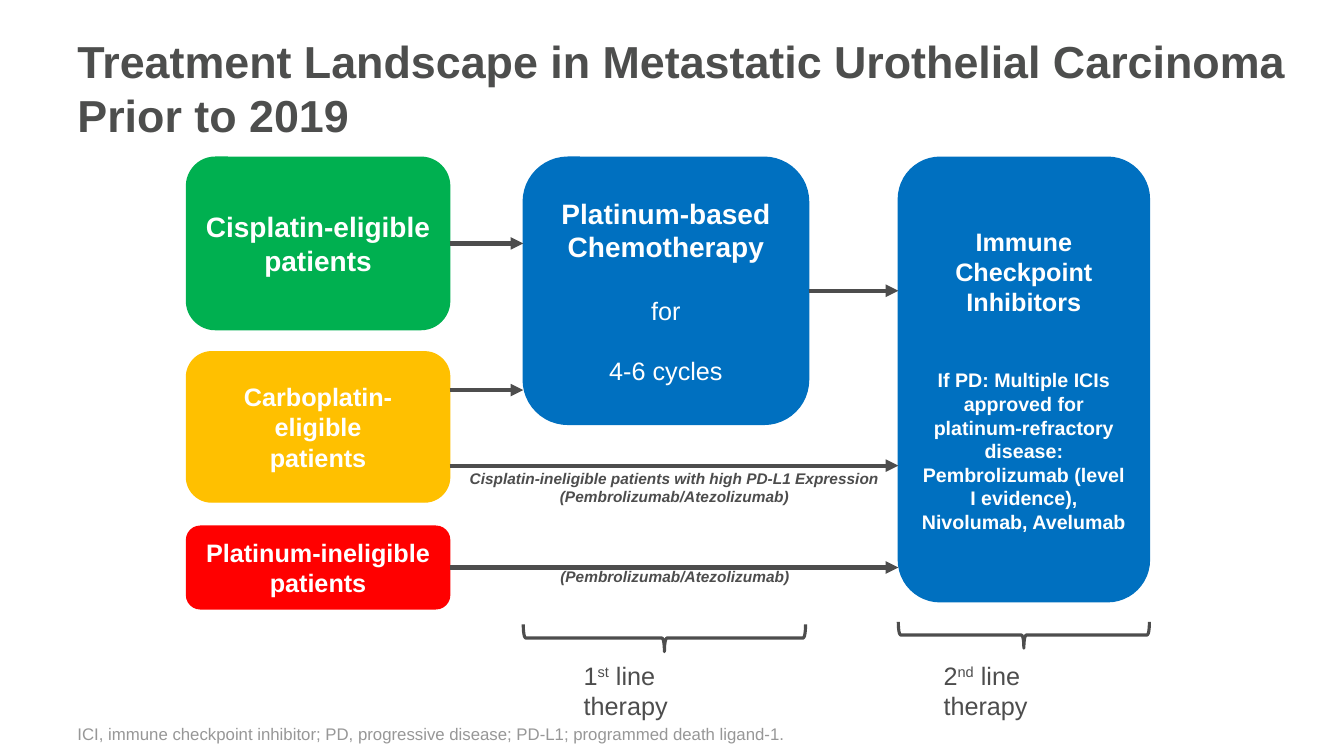
from lxml import etree
from pptx import Presentation
from pptx.dml.color import RGBColor
from pptx.enum.shapes import MSO_CONNECTOR, MSO_SHAPE as Shape
from pptx.enum.text import MSO_ANCHOR as Anchor, PP_ALIGN as Align
from pptx.oxml.ns import qn
from pptx.util import Inches, Pt

GREY, WHITE, BLUE = "4D4D4D", "FFFFFF", "0070C0"
# Columns (left, width) and shared rows of the diagram
PATIENTS, FIRST_LINE, SECOND_LINE = (1.85, 2.61), (5.19, 2.83), (8.91, 2.49)
TOP, LABEL_ROW, MARGIN = 1.56, 6.5, 0.67


def color(code):
    return RGBColor.from_string(code)


def write(part, paragraphs, code, align=Align.CENTER, anchor=Anchor.MIDDLE, italic=False):
    """Fill a part with paragraphs of (text, size, bold, space before)."""
    frame = part.text_frame
    frame.word_wrap, frame.vertical_anchor = True, anchor
    frame.text = "\n".join(text for text, *_ in paragraphs)
    for paragraph, (_, size, bold, gap) in zip(frame.paragraphs, paragraphs):
        paragraph.alignment = align
        if gap:
            paragraph.space_before = Pt(gap)
        for run in paragraph.runs:
            font = run.font
            font.name, font.size, font.bold, font.italic = "Arial", Pt(size), bold, italic
            font.color.rgb = color(code)


prs = Presentation()
prs.slide_width, prs.slide_height = Inches(13.33), Inches(7.5)
slide = prs.slides.add_slide(prs.slide_layouts[6])
shapes = slide.shapes

# Patient groups and treatments
boxes = {}
for name, (left, width), top, height, fill, paragraphs in [
    ("immune", SECOND_LINE, TOP, 4.41, BLUE, [
        ("Immune Checkpoint Inhibitors", 18, True, 0),
        ("If PD: Multiple ICIs approved for platinum-refractory disease: "
         "Pembrolizumab (level I evidence), Nivolumab, Avelumab", 14, True, 37)]),
    ("cisplatin", PATIENTS, TOP, 1.71, "00B050", [
        ("Cisplatin-eligible", 20, True, 0), ("patients", 20, True, 0)]),
    ("carboplatin", PATIENTS, 3.49, 1.49, "FFC000", [
        ("Carboplatin-eligible", 18, True, 0), ("patients", 18, True, 0)]),
    ("ineligible", PATIENTS, 5.22, 0.82, "FF0000", [
        ("Platinum-ineligible", 18, True, 0), ("patients", 18, True, 0)]),
    ("chemotherapy", FIRST_LINE, TOP, 2.65, BLUE, [
        ("Platinum-based Chemotherapy", 20, True, 0),
        ("for", 18, False, 23), ("4-6 cycles", 18, False, 21)]),
]:
    box = shapes.add_shape(Shape.ROUNDED_RECTANGLE, Inches(left), Inches(top),
                           Inches(width), Inches(height))
    box.shadow.inherit = False
    box.fill.solid()
    box.fill.fore_color.rgb = box.line.color.rgb = color(fill)
    box.line.width = Pt(1)
    write(box, paragraphs, WHITE)
    boxes[name] = box

# Arrows: level with the middle of their start box unless a height is given
for start, end, level in [
    ("cisplatin", "chemotherapy", None),
    ("carboplatin", "chemotherapy", 3.87),
    ("carboplatin", "immune", 4.62),
    ("ineligible", "immune", None),
    ("chemotherapy", "immune", None),
]:
    origin, target = boxes[start], boxes[end]
    y = Inches(level) if level else origin.top + origin.height // 2
    arrow = shapes.add_connector(MSO_CONNECTOR.STRAIGHT, origin.left + origin.width, y,
                                 target.left, y)
    if level is None:
        arrow.begin_connect(origin, 3)
    arrow.line.color.rgb, arrow.line.width = color(GREY), Pt(3)
    etree.SubElement(arrow.line._get_or_add_ln(), qn("a:tailEnd"), type="triangle")
    etree.SubElement(arrow._element.spPr, qn("a:effectLst"))

# Notes under the long arrows
for left, top, width, height, lines in [
    (4.5, 4.6, 4.38, 0.49, ["Cisplatin-ineligible patients with high PD-L1 Expression",
                            "(Pembrolizumab/Atezolizumab)"]),
    (5.43, 5.58, 2.53, 0.29, ["(Pembrolizumab/Atezolizumab)"]),
]:
    note = shapes.add_textbox(Inches(left), Inches(top), Inches(width), Inches(height))
    write(note, [(line, 11, True, 0) for line in lines], GREY, anchor=Anchor.TOP, italic=True)

# Braces and therapy lines
for (left, span), middle, thickness, label_left, number, suffix in [
    (FIRST_LINE, 6.33, 0.27, 5.69, "1", "st"),
    (SECOND_LINE, 6.3, 0.26, 9.26, "2", "nd"),
]:
    span = min(span, 2.8)
    brace = shapes.add_shape(Shape.LEFT_BRACE, Inches(left + (span - thickness) / 2),
                             Inches(middle - span / 2), Inches(thickness), Inches(span))
    brace.rotation = 270
    brace.shadow.inherit = False
    brace.fill.background()
    brace.line.color.rgb, brace.line.width = color(GREY), Pt(2.25)

    label = shapes.add_textbox(Inches(label_left), Inches(LABEL_ROW), Inches(1.79), Inches(0.4))
    label.text_frame.margin_right = Inches(0.6)
    paragraph = label.text_frame.paragraphs[0]
    label.text_frame.word_wrap = True
    for text in (number, suffix, " line therapy"):
        run = paragraph.add_run()
        run.text = text
        run.font.name, run.font.size = "Arial", Pt(18)
        run.font.color.rgb = color(GREY)
        if text == suffix:
            run.font._element.set("baseline", "30000")

# Title and abbreviations
for top, width, height, text, size, bold, code, anchor in [
    (0.22, 12.27, 1.3, "Treatment Landscape in Metastatic Urothelial Carcinoma Prior to 2019",
     32, True, "4D4E4D", Anchor.MIDDLE),
    (6.95, 11.75, 0.48, "ICI, immune checkpoint inhibitor; PD, progressive disease; "
     "PD-L1; programmed death ligand-1.", 12, False, "979797", Anchor.BOTTOM),
]:
    line = shapes.add_textbox(Inches(MARGIN), Inches(top), Inches(width), Inches(height))
    write(line, [(text, size, bold, 0)], code, Align.LEFT, anchor)

prs.save("out.pptx")
